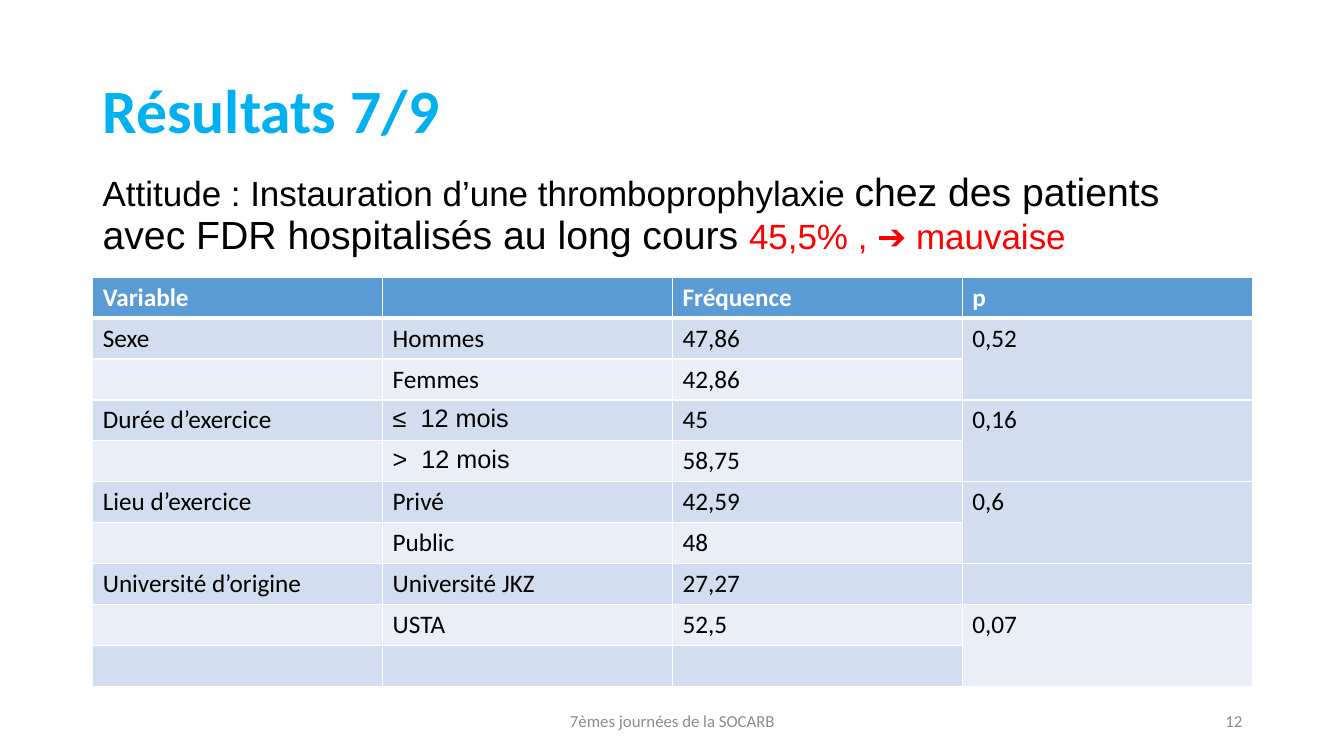
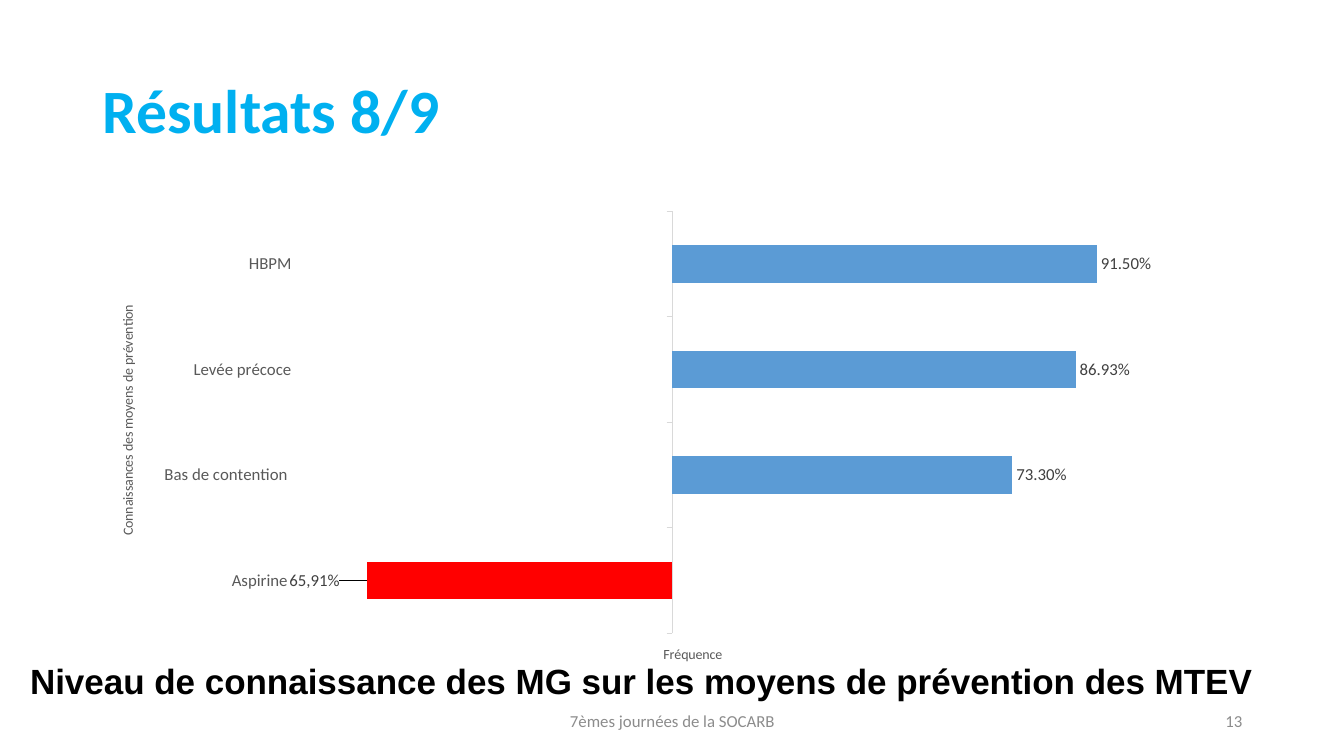
from lxml import etree
from pptx import Presentation
from pptx.chart.data import CategoryChartData
from pptx.dml.color import RGBColor
from pptx.enum.chart import XL_CHART_TYPE as ChartType
from pptx.enum.chart import XL_LABEL_POSITION as LabelPos
from pptx.enum.chart import XL_TICK_LABEL_POSITION as TickLabelPos
from pptx.enum.chart import XL_TICK_MARK as TickMark
from pptx.enum.text import MSO_ANCHOR as Anchor
from pptx.enum.text import PP_ALIGN as Align
from pptx.oxml import parse_xml
from pptx.oxml.ns import nsdecls, qn
from pptx.util import Pt

# Scale: 100 px to the inch
PX = 9144
SLIDE_W, SLIDE_H = 1333, 750

# Colours
CYAN = RGBColor(0x00, 0xB0, 0xF0)
BLACK = RGBColor(0x00, 0x00, 0x00)
WHITE = RGBColor(0xFF, 0xFF, 0xFF)
RED = RGBColor(0xFF, 0x00, 0x00)
BLUE = RGBColor(0x5B, 0x9B, 0xD5)
BANDS = (RGBColor(0xD2, 0xDE, 0xEF), RGBColor(0xEA, 0xEF, 0xF7))
FOOTER_GREY = RGBColor(0x8C, 0x8C, 0x8C)
AXIS_GREY = RGBColor(0x59, 0x59, 0x59)
LABEL_GREY = RGBColor(0x40, 0x40, 0x40)
LINE_GREY = RGBColor(0xD9, 0xD9, 0xD9)


# Text styles
def style(size, color, name="Calibri", bold=False):
    return {"size": Pt(size), "name": name, "bold": bold, "color": color}


TITLE = style(44, CYAN, bold=True)
STATEMENT = style(25, BLACK, "Arial")
STATEMENT_LARGE = style(28, BLACK, "Arial")
VERDICT = style(25, RED, "Arial")
CAPTION = style(25, BLACK, "Arial", True)
FOOTER = style(12, FOOTER_GREY)
HEADER = style(18, WHITE, bold=True)
CELL = style(18, BLACK)
CELL_ARIAL = style(18, BLACK, "Arial")
CHART = style(10, BLACK)
AXIS_TITLE = style(10, AXIS_GREY)
AXIS_LABEL = style(12, AXIS_GREY)
VALUE_LABEL = style(12, LABEL_GREY)

# Places: left, top, width, height
TITLE_BOX = (92, 40, 1150, 145)
STATEMENT_BOX = (92, 153, 1150, 121)
TABLE_BOX = (92, 275, 1150, 406)
CHART_BOX = (92, 200, 1150, 476)
CAPTION_BOX = (20, 605, 1276, 145)
FOOTER_BOX = (442, 695, 450, 40)
NUMBER_BOX = (942, 695, 300, 40)

# Content
EVENT = "7èmes journées de la SOCARB"

ATTITUDE = [
    ("Attitude : Instauration d’une thromboprophylaxie ", STATEMENT),
    ("chez des patients avec FDR hospitalisés au long cours ", STATEMENT_LARGE),
    ("45,5% , ➔ mauvaise", VERDICT),
]
FREQUENCIES = [
    ("Variable", "", "Fréquence", "p"),
    ("Sexe", "Hommes", "47,86", "0,52"),
    ("", "Femmes", "42,86", ""),
    ("Durée d’exercice", "≤  12 mois", "45", "0,16"),
    ("", ">  12 mois", "58,75", ""),
    ("Lieu d’exercice", "Privé", "42,59", "0,6"),
    ("", "Public", "48", ""),
    ("Université d’origine", "Université JKZ", "27,27", ""),
    ("", "USTA", "52,5", "0,07"),
    ("", "", "", ""),
]
P_COLUMN = 3
ARIAL_CELLS = {(3, 1), (4, 1)}

PREVENTION = [
    ("Aspirine ", -0.6591),
    ("Bas de contention ", 0.733),
    ("Levée précoce", 0.8693),
    ("HBPM", 0.915),
]
ASPIRIN_LABEL = "65,91%"
CATEGORY_TITLE = "Connaissances des moyens de prévention"
VALUE_TITLE = "Fréquence"
CAPTION_TEXT = "Niveau de connaissance des MG sur les moyens de prévention des MTEV"


# Shared helpers
def emu(box):
    return [value * PX for value in box]


def apply_font(font, look):
    for key, value in look.items():
        if key == "color":
            font.color.rgb = value
        else:
            setattr(font, key, value)


def write(paragraph, runs):
    for text, look in runs:
        run = paragraph.add_run()
        run.text = text
        apply_font(run.font, look)


def add_text(slide, box, runs, align=Align.LEFT, spacing=None):
    frame = slide.shapes.add_textbox(*emu(box)).text_frame
    frame.word_wrap = True
    frame.vertical_anchor = Anchor.MIDDLE
    paragraph = frame.paragraphs[0]
    paragraph.alignment = align
    paragraph.line_spacing = spacing
    write(paragraph, runs)


def add_slide(prs, title, number):
    slide = prs.slides.add_slide(prs.slide_layouts[6])
    add_text(slide, TITLE_BOX, [(title, TITLE)], spacing=0.9)
    add_text(slide, FOOTER_BOX, [(EVENT, FOOTER)], Align.CENTER)
    add_text(slide, NUMBER_BOX, [(str(number), FOOTER)], Align.RIGHT)
    return slide


# Table
def set_borders(cell, bottom):
    widths = {"lnL": 1, "lnR": 1, "lnT": 1, "lnB": bottom}
    for index, (side, width) in enumerate(widths.items()):
        cell._tc.get_or_add_tcPr().insert(index, parse_xml(
            f'<a:{side} {nsdecls("a")} w="{Pt(width)}"><a:solidFill>'
            f'<a:srgbClr val="{WHITE}"/></a:solidFill></a:{side}>'))


def add_frequencies(slide):
    row_count, column_count = len(FREQUENCIES), len(FREQUENCIES[0])
    table = slide.shapes.add_table(
        row_count, column_count, *emu(TABLE_BOX)).table
    for r, row in enumerate(FREQUENCIES):
        for c, text in enumerate(row):
            cell = table.cell(r, c)
            cell.fill.solid()
            cell.fill.fore_color.rgb = BANDS[(r - 1) % 2] if r else BLUE
            set_borders(cell, 1 if r else 3)
            look = CELL_ARIAL if (r, c) in ARIAL_CELLS else CELL
            if text:
                write(cell.text_frame.paragraphs[0],
                      [(text, look if r else HEADER)])
        # Each p value covers two rows
        if r and row[P_COLUMN]:
            table.cell(r, P_COLUMN).merge(table.cell(r + 1, P_COLUMN))


# Chart
def manual_layout(inner=False, **fractions):
    layout = etree.Element(qn("c:layout"))
    manual = etree.SubElement(layout, qn("c:manualLayout"))
    settings = {"layoutTarget": "inner"} if inner else {}
    if "w" in fractions:
        settings.update(xMode="edge", yMode="edge")
    for key, value in {**settings, **fractions}.items():
        etree.SubElement(manual, qn(f"c:{key}")).set("val", str(value))
    return layout


def set_axis_title(axis, text, x, y):
    title = axis.axis_title
    write(title.text_frame.paragraphs[0], [(text, AXIS_TITLE)])
    for old in title._element.findall(qn("c:layout")):
        title._element.remove(old)
    title._element.find(qn("c:tx")).addnext(
        manual_layout(xMode="edge", yMode="edge", x=x, y=y))


def add_prevention(slide):
    data = CategoryChartData(number_format="0.00%")
    data.categories = [name for name, _ in PREVENTION]
    data.add_series("Series 1", [value for _, value in PREVENTION])
    chart = slide.shapes.add_chart(
        ChartType.BAR_CLUSTERED, *emu(CHART_BOX), data).chart
    chart.has_legend = chart.has_title = False
    apply_font(chart.font, CHART)

    # Axes
    means, share = chart.category_axis, chart.value_axis
    means.tick_label_position = TickLabelPos.LOW
    means.major_tick_mark = TickMark.OUTSIDE
    means.format.line.color.rgb = LINE_GREY
    means.format.line.width = Pt(0.75)
    apply_font(means.tick_labels.font, AXIS_LABEL)
    share.minimum_scale, share.maximum_scale = -0.8, 1.2
    share.has_major_gridlines = False
    share.visible = False
    set_axis_title(means, CATEGORY_TITLE, 0.02, 0.21)
    set_axis_title(share, VALUE_TITLE, 0.49, 0.92)

    # Plot area
    area = chart._chartSpace.chart.plotArea
    for old in area.findall(qn("c:layout")):
        area.remove(old)
    area.insert(0, manual_layout(True, x=0.18, y=0.02, w=0.8, h=0.88))

    # Bars and value labels
    plot = chart.plots[0]
    plot.gap_width = 182
    plot.vary_by_categories = False
    bars = plot.series[0]
    bars.invert_if_negative = False
    aspirin = bars.points[0]
    for part, color in ((bars, BLUE), (aspirin, RED)):
        part.format.fill.solid()
        part.format.fill.fore_color.rgb = color
    labels = bars.data_labels
    labels.show_value = True
    labels.number_format = "0.00%"
    labels.number_format_is_linked = False
    labels.position = LabelPos.OUTSIDE_END
    apply_font(labels.font, VALUE_LABEL)
    own_label = aspirin.data_label
    write(own_label.text_frame.paragraphs[0], [(ASPIRIN_LABEL, VALUE_LABEL)])
    own_label.position = LabelPos.OUTSIDE_END
    own_index = labels._element.find(qn("c:dLbl")).find(qn("c:idx"))
    own_index.addnext(manual_layout(x=-0.02, y=0))


def main():
    prs = Presentation()
    prs.slide_width, prs.slide_height = emu((SLIDE_W, SLIDE_H))

    attitude = add_slide(prs, "Résultats 7/9", 12)
    add_frequencies(attitude)
    add_text(attitude, STATEMENT_BOX, ATTITUDE, spacing=0.9)

    knowledge = add_slide(prs, "Résultats 8/9", 13)
    add_text(knowledge, CAPTION_BOX, [(CAPTION_TEXT, CAPTION)], spacing=0.9)
    add_prevention(knowledge)

    prs.save("out.pptx")


if __name__ == "__main__":
    main()
